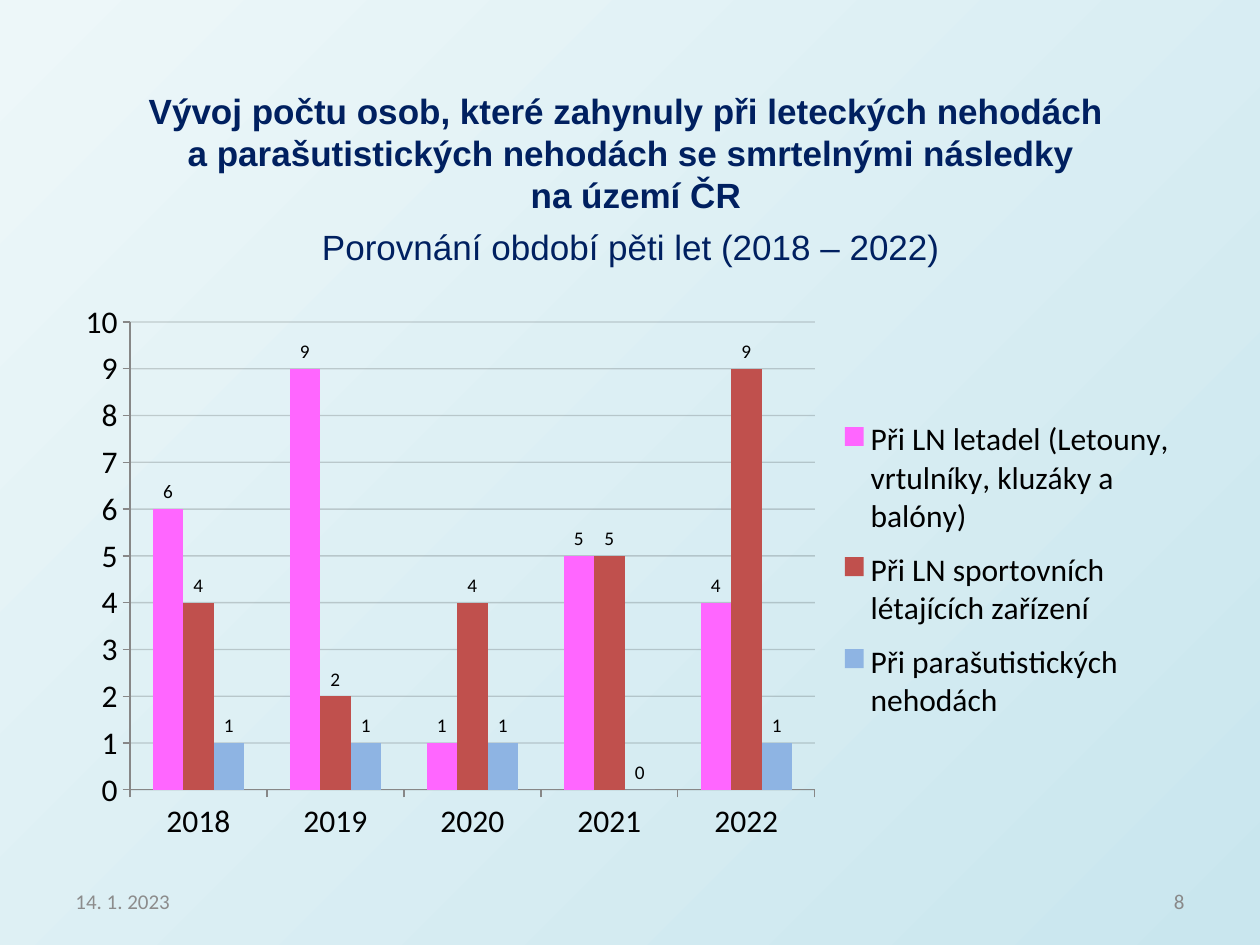
from dataclasses import dataclass

from lxml.etree import SubElement
from pptx import Presentation
from pptx.chart.data import CategoryChartData
from pptx.dml.color import RGBColor
from pptx.enum.chart import XL_CHART_TYPE, XL_LABEL_POSITION, XL_LEGEND_POSITION, XL_TICK_MARK
from pptx.enum.text import MSO_ANCHOR, PP_ALIGN
from pptx.oxml import parse_xml
from pptx.oxml.ns import nsdecls, qn
from pptx.util import Emu, Pt

PX_PER_INCH = 126
NAVY = RGBColor(0x00, 0x20, 0x60)
DATE_GREY = RGBColor(0x8C, 0x8C, 0x8C)
NUMBER_GREY = RGBColor(0x89, 0x89, 0x89)
AXIS_GREY = RGBColor(0x87, 0x87, 0x87)
BLACK = RGBColor(0x00, 0x00, 0x00)
PINK = RGBColor(0xFF, 0x66, 0xFF)
RED = RGBColor(0xC0, 0x50, 0x4D)
BLUE = RGBColor(0x8E, 0xB4, 0xE3)
BACKGROUND = (RGBColor(0xED, 0xF7, 0xF9), RGBColor(0xC9, 0xE6, 0xEE))


@dataclass(frozen=True)
class Box:
    left: int
    top: int
    width: int
    height: int

    def emu(self) -> tuple:
        return tuple(map(px, (self.left, self.top, self.width, self.height)))


@dataclass(frozen=True)
class Label:
    text: str
    box: Box
    size: int
    font: str
    color: RGBColor
    align: PP_ALIGN
    anchor: MSO_ANCHOR
    space_before: int = 0


@dataclass(frozen=True)
class Deaths:
    name: str
    counts: tuple
    color: RGBColor


HEADING = Label(
    "Vývoj počtu osob, které zahynuly při leteckých nehodách \v"
    "a parašutistických nehodách se smrtelnými následky\v"
    " na území ČR\n"
    "Porovnání období pěti let (2018 – 2022)",
    Box(105, 83, 1052, 193), 20, "Arial", NAVY, PP_ALIGN.CENTER, MSO_ANCHOR.TOP, 6)
DATE = Label("14. 1. 2023", Box(63, 876, 294, 50), 12, "Calibri", DATE_GREY,
             PP_ALIGN.LEFT, MSO_ANCHOR.MIDDLE)
NUMBER = Label("8", Box(903, 876, 294, 50), 12, "Calibri", NUMBER_GREY,
               PP_ALIGN.RIGHT, MSO_ANCHOR.MIDDLE)

YEARS = ("2018", "2019", "2020", "2021", "2022")
DEATHS = (
    Deaths("Při LN letadel (Letouny, vrtulníky, kluzáky a balóny)", (6, 9, 1, 5, 4), PINK),
    Deaths("Při LN sportovních létajících zařízení", (4, 2, 4, 5, 9), RED),
    Deaths("Při parašutistických nehodách", (1, 1, 1, 0, 1), BLUE),
)
CHART = Box(63, 292, 1129, 560)
PLOT = Box(130, 322, 685, 468)
LEGEND = Box(832, 405, 350, 330)


def px(length: int) -> Emu:
    return Emu(round(length * 914400 / PX_PER_INCH))


def add_label(slide, label: Label):
    frame = slide.shapes.add_textbox(*label.box.emu()).text_frame
    frame.word_wrap = True
    frame.vertical_anchor = label.anchor
    frame.text = label.text
    for paragraph in frame.paragraphs:
        paragraph.alignment = label.align
        paragraph.space_before = Pt(label.space_before)
        for run in paragraph.runs:
            run.font.size = Pt(label.size)
            run.font.name = label.font
            run.font.color.rgb = label.color
    return frame


def place(parent, index: int, box: Box, target: str = "") -> None:
    for layout in parent.findall(qn("c:layout")):
        parent.remove(layout)
    fractions = {
        "x": (box.left - CHART.left) / CHART.width,
        "y": (box.top - CHART.top) / CHART.height,
        "w": box.width / CHART.width,
        "h": box.height / CHART.height,
    }
    modes = '<c:xMode val="edge"/><c:yMode val="edge"/>'
    sizes = "".join(f'<c:{key} val="{value:.4f}"/>' for key, value in fractions.items())
    parent.insert(index, parse_xml(
        f'<c:layout {nsdecls("c")}><c:manualLayout>{target}{modes}{sizes}'
        "</c:manualLayout></c:layout>"))


def style_axes(chart) -> None:
    for axis in (chart.category_axis, chart.value_axis):
        axis.major_tick_mark = XL_TICK_MARK.OUTSIDE
        axis.minor_tick_mark = XL_TICK_MARK.NONE
        axis.format.line.color.rgb = AXIS_GREY
        axis.format.line.width = Pt(0.75)
    counts = chart.value_axis
    counts.minimum_scale, counts.maximum_scale, counts.major_unit = 0, 10, 1
    grid = counts.major_gridlines.format.line
    grid.color.rgb = BLACK
    grid.width = Pt(0.75)
    for color in counts.major_gridlines._xAx.find(qn("c:majorGridlines")).iter(qn("a:srgbClr")):
        SubElement(color, qn("a:alpha")).set("val", "17000")


def add_deaths_chart(slide) -> None:
    data = CategoryChartData()
    data.categories = YEARS
    for deaths in DEATHS:
        data.add_series(deaths.name, deaths.counts)
    chart = slide.shapes.add_chart(
        XL_CHART_TYPE.COLUMN_CLUSTERED, *CHART.emu(), data).chart
    chart.has_title = False
    chart.font.size = Pt(18)
    chart.font.name = "Calibri"
    chart.font.color.rgb = BLACK
    chart.has_legend = True
    chart.legend.position = XL_LEGEND_POSITION.RIGHT
    chart.legend.include_in_layout = False
    columns = chart.plots[0]
    columns.gap_width = 150
    columns.overlap = 0
    columns.vary_by_categories = False
    for series, deaths in zip(columns.series, DEATHS):
        series.format.fill.solid()
        series.format.fill.fore_color.rgb = deaths.color
        values = series.data_labels
        values.show_value = True
        values.position = XL_LABEL_POSITION.OUTSIDE_END
        values.font.size = Pt(11)
    style_axes(chart)
    plot_area = chart._chartSpace.find(f".//{qn('c:plotArea')}")
    place(plot_area, 0, PLOT, '<c:layoutTarget val="inner"/>')
    place(chart.legend._element, 1, LEGEND)


def paint_background(slide) -> None:
    fill = slide.background.fill
    fill.gradient()
    fill.gradient_angle = 315
    for stop, color in zip(fill.gradient_stops, BACKGROUND):
        stop.color.rgb = color


def main() -> None:
    presentation = Presentation()
    presentation.slide_width, presentation.slide_height = px(1260), px(945)
    slide = presentation.slides.add_slide(presentation.slide_layouts[6])
    paint_background(slide)
    add_label(slide, DATE)
    add_label(slide, NUMBER)
    add_deaths_chart(slide)
    heading = add_label(slide, HEADING)
    for run in heading.paragraphs[0].runs:
        run.font.bold = True
    presentation.save("out.pptx")


if __name__ == "__main__":
    main()
